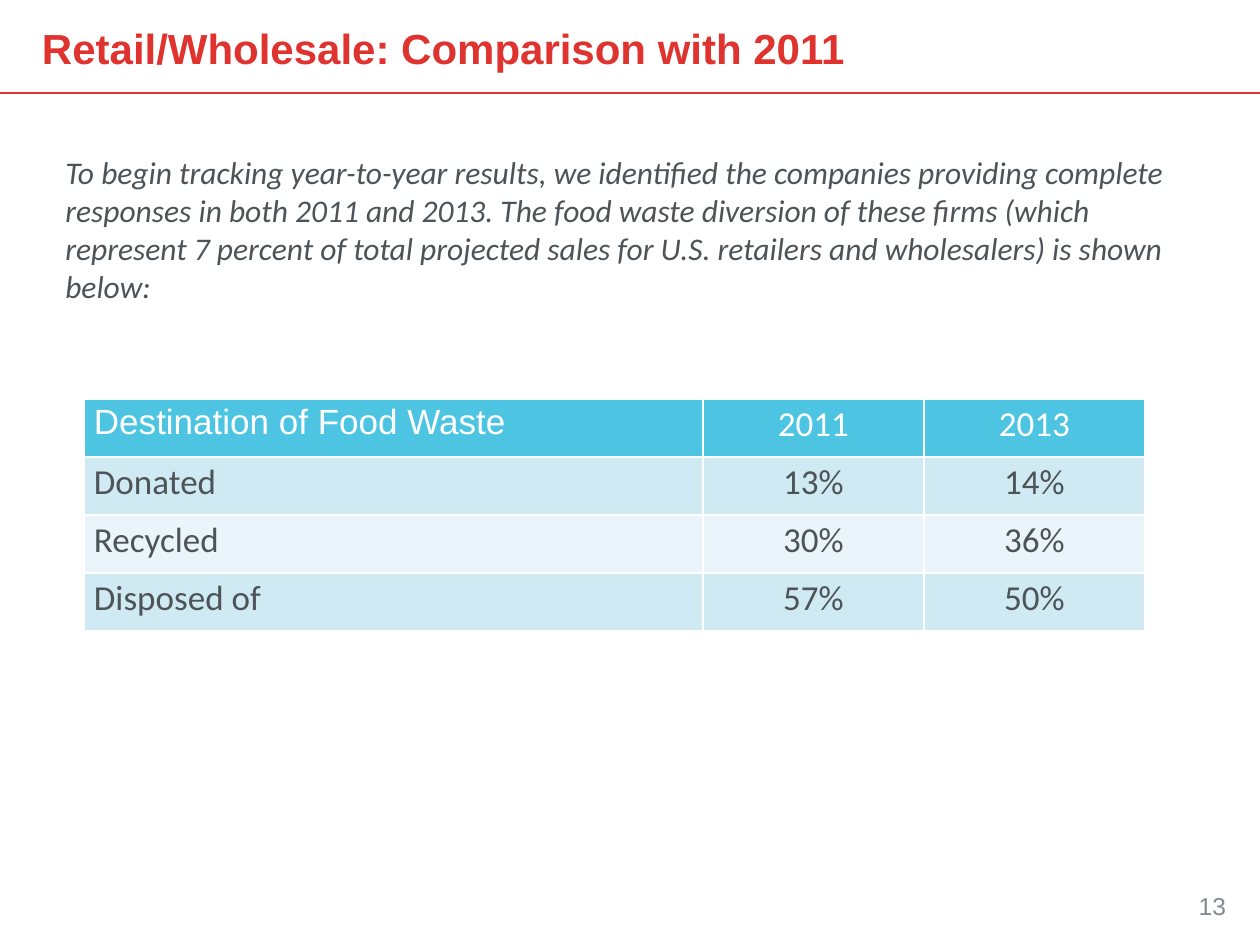
"""Build the slide comparing retail and wholesale food waste in 2011 and 2013."""
from lxml.etree import SubElement
from pptx import Presentation
from pptx.dml.color import RGBColor
from pptx.enum.shapes import MSO_CONNECTOR as Connector
from pptx.enum.text import MSO_ANCHOR as Anchor, PP_ALIGN as Align
from pptx.oxml import parse_xml
from pptx.oxml.ns import nsdecls, qn
from pptx.util import Emu, Pt

COLORS = {"red": "DF332F", "text": "4D5357", "number": "828A8F", "white": "FFFFFF",
          "header": "4DC5E2", "band": "D0EAF4", "light": "E9F5FA"}
SCALE = 914400 / 126


def px(*lengths):
    return [Emu(round(length * SCALE)) for length in lengths]


def add_run(text_frame, text, size, font, color, align=Align.LEFT, bold=False, italic=False):
    paragraph = text_frame.paragraphs[0]
    paragraph.alignment = align
    run = paragraph.add_run()
    run.text = text
    run.font.size = Pt(size)
    run.font.name = font
    run.font.bold = bold
    run.font.italic = italic
    run.font.color.rgb = RGBColor.from_string(COLORS[color])


presentation = Presentation()
presentation.slide_width, presentation.slide_height = px(1260, 945)
slide = presentation.slides.add_slide(presentation.slide_layouts[6])

rule = slide.shapes.add_connector(Connector.STRAIGHT, *px(0, 93, 1260, 93))
rule.line.color.rgb = RGBColor.from_string(COLORS["red"])
rule.line.width = Pt(1.5)
SubElement(rule._element.spPr, qn("a:effectLst"))

INTRO = ("To begin tracking year-to-year results, we identified the companies providing "
         "complete responses in both 2011 and 2013. The food waste diversion of these firms "
         "(which represent 7 percent of total projected sales for U.S. retailers and "
         "wholesalers) is shown below:")
texts = [
    ((42, 0, 1173, 95), (0, 0), Anchor.MIDDLE,
     ("Retail/Wholesale: Comparison with 2011", 24, "Arial", "red", Align.LEFT, True)),
    ((932, 891, 294, 42), (0, 0), Anchor.TOP,
     ("13", 14, "Arial", "number", Align.RIGHT)),
    ((53, 147, 1134, 165), (12.6, 6.3), Anchor.TOP,
     (INTRO, 18, "Calibri", "text", Align.LEFT, False, True)),
]
for place, (side, edge), anchor, run in texts:
    text_frame = slide.shapes.add_textbox(*px(*place)).text_frame
    text_frame.word_wrap = True
    text_frame.vertical_anchor = anchor
    text_frame.margin_left, text_frame.margin_right = px(side, side)
    text_frame.margin_top, text_frame.margin_bottom = px(edge, edge)
    add_run(text_frame, *run)

rows = [("Destination of Food Waste", "2011", "2013"),
        ("Donated", "13%", "14%"),
        ("Recycled", "30%", "36%"),
        ("Disposed of", "57%", "50%")]
fills = ["header", "band", "light", "band"]
table = slide.shapes.add_table(len(rows), 3, *px(84, 399, 1061, 232)).table
for column, width in zip(table.columns, px(619, 221, 221)):
    column.width = width
for row, values in enumerate(rows):
    table.rows[row].height = px(58)[0]
    for column, value in enumerate(values):
        cell = table.cell(row, column)
        cell.margin_left, cell.margin_right = px(10, 10)
        cell.margin_top, cell.margin_bottom = px(4, 4)
        for side in ("lnL", "lnR", "lnT", "lnB"):
            cell._tc.get_or_add_tcPr().append(parse_xml(
                f'<a:{side} {nsdecls("a")} w="12700"><a:solidFill>'
                f'<a:srgbClr val="{COLORS["white"]}"/></a:solidFill></a:{side}>'))
        cell.fill.solid()
        cell.fill.fore_color.rgb = RGBColor.from_string(COLORS[fills[row]])
        add_run(cell.text_frame, value, 20, "Calibri" if row or column else "Arial",
                "text" if row else "white", Align.CENTER if column else Align.LEFT)

presentation.save("out.pptx")
